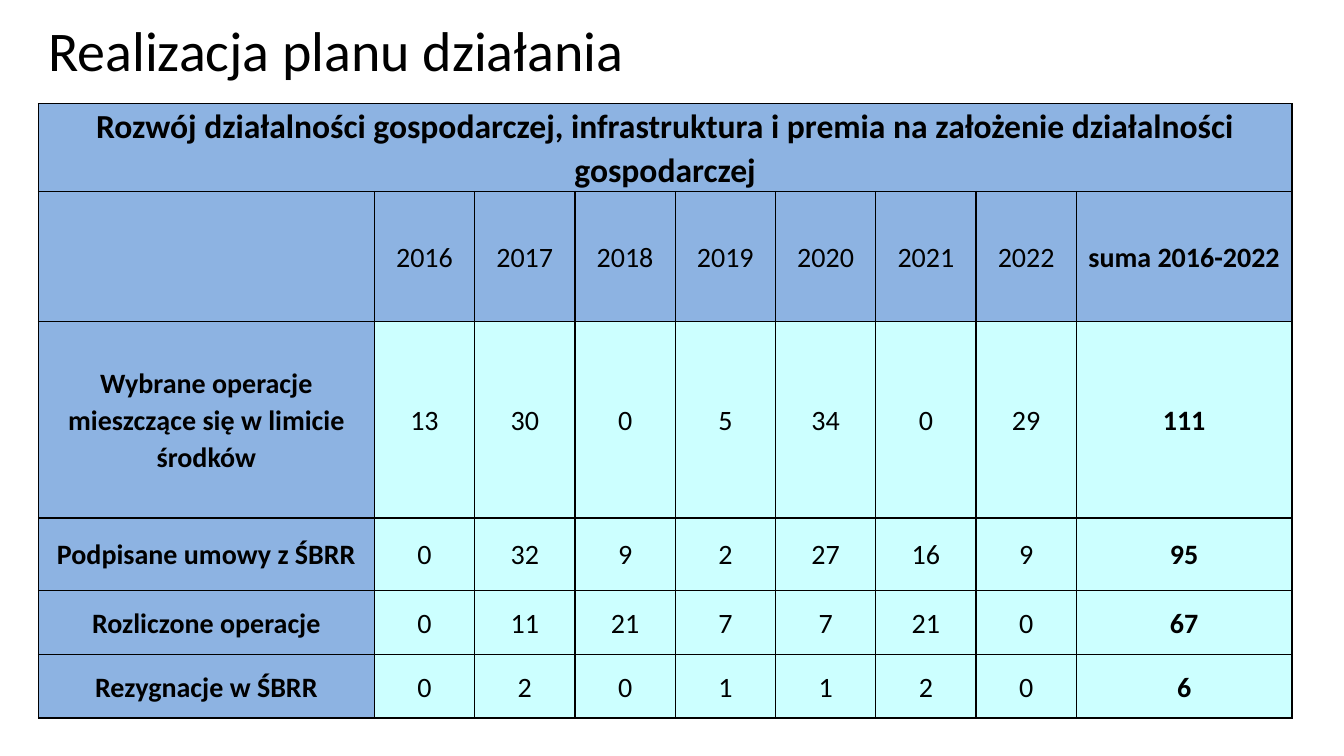
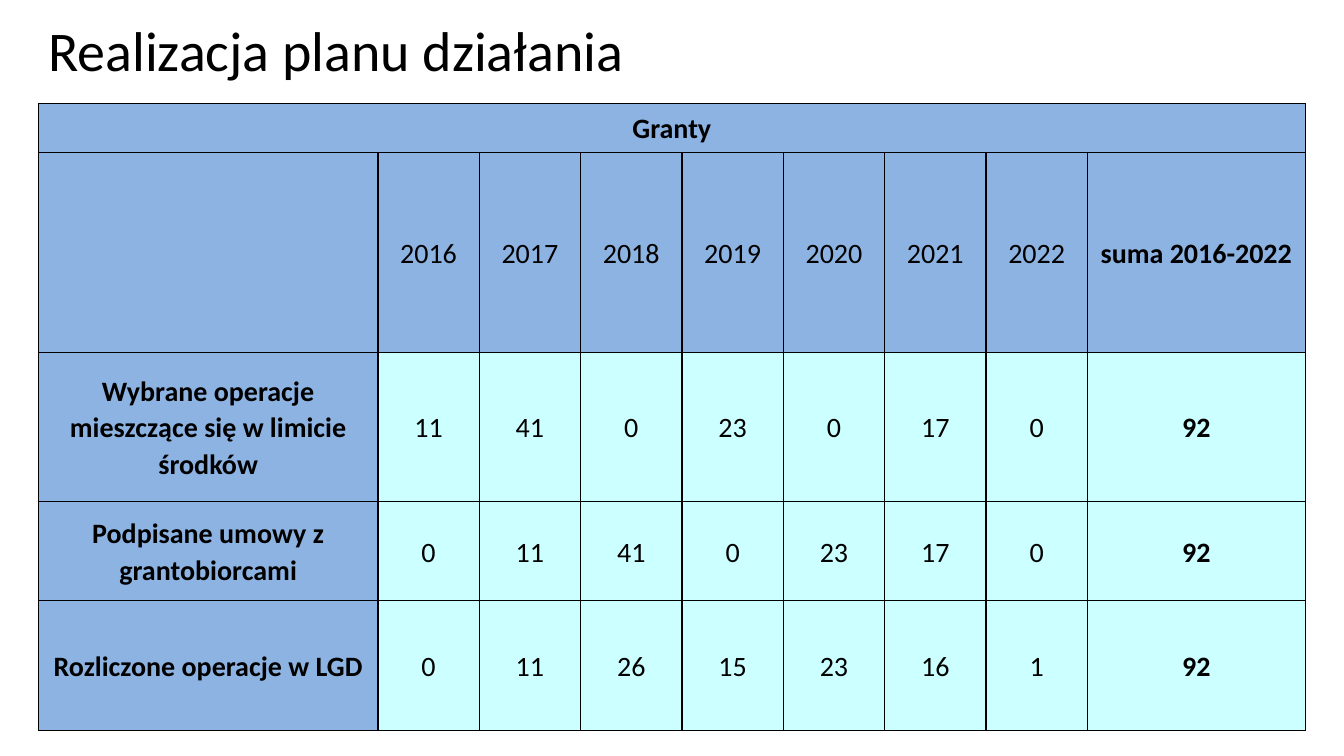
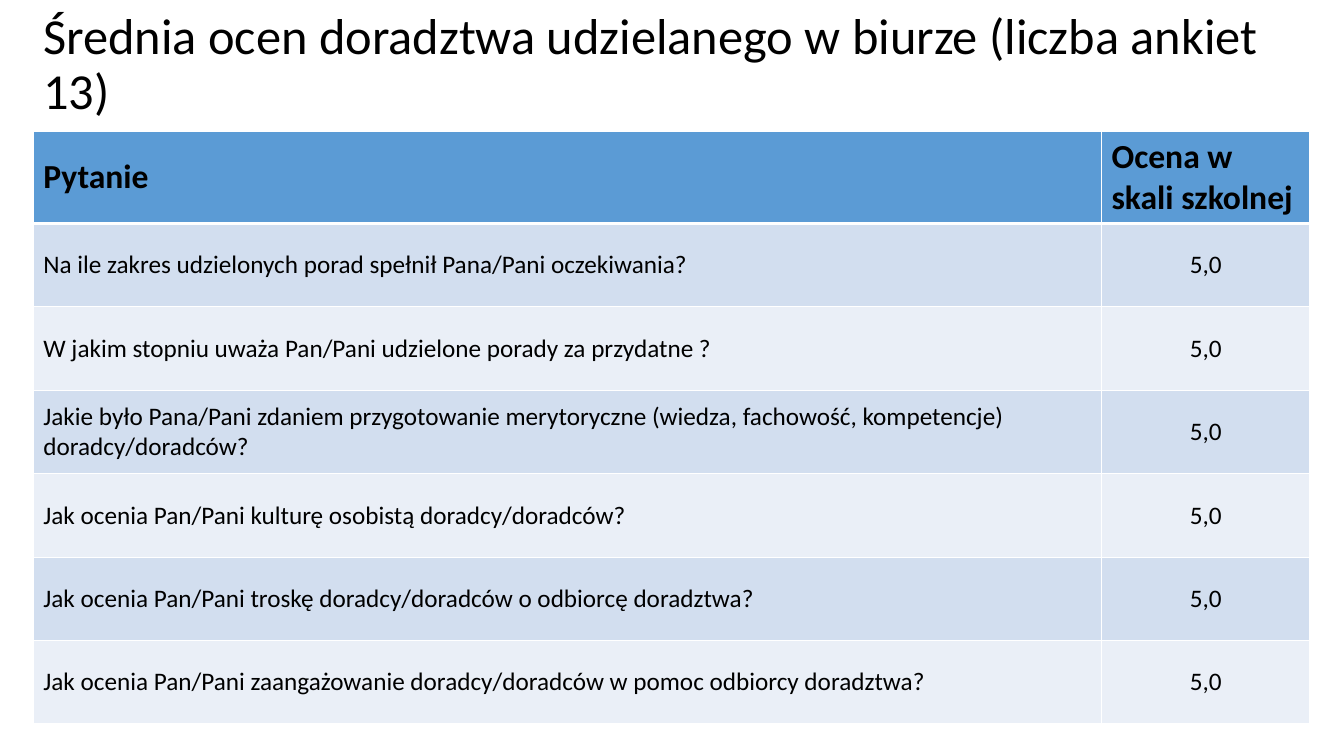
from lxml import etree
from pptx import Presentation
from pptx.dml.color import RGBColor
from pptx.enum.text import MSO_ANCHOR, PP_ALIGN
from pptx.oxml.ns import qn
from pptx.util import Pt

MIDDLE, LEFT, CENTER = MSO_ANCHOR.MIDDLE, PP_ALIGN.LEFT, PP_ALIGN.CENTER
BLACK = RGBColor(0x00, 0x00, 0x00)
WHITE = RGBColor(0xFF, 0xFF, 0xFF)
HEADING_BLUE = RGBColor(0x8D, 0xB3, 0xE2)
VALUE_CYAN = RGBColor(0xCC, 0xFF, 0xFF)
SURVEY_BLUE = RGBColor(0x5B, 0x9B, 0xD5)
BANDS = [RGBColor(0xD2, 0xDE, 0xEF), RGBColor(0xEA, 0xEF, 0xF7)]
FONT = "Calibri"

# Content
PLAN_TITLE = "Realizacja planu działania"
YEARS = list(range(2016, 2023))
SELECTED = "Wybrane operacje mieszczące się w limicie środków"
PLANS = [
    {
        "heading": "Rozwój działalności gospodarczej, infrastruktura i premia "
                   "na założenie działalności gospodarczej",
        "heading_size": 24,
        "width": 895.6,
        "heights": [62.6, 93, 140.2, 51.8, 46, 45.2],
        "rows": [
            (SELECTED, [13, 30, 0, 5, 34, 0, 29]),
            ("Podpisane umowy z ŚBRR", [0, 32, 9, 2, 27, 16, 9]),
            ("Rozliczone operacje", [0, 11, 21, 7, 7, 21, 0]),
            ("Rezygnacje w ŚBRR", [0, 2, 0, 1, 1, 2, 0]),
        ],
    },
    {
        "heading": "Granty",
        "heading_size": 20,
        "width": 905,
        "heights": [34.5, 143, 106.8, 70.6, 93],
        "rows": [
            (SELECTED, [11, 41, 0, 23, 0, 17, 0]),
            ("Podpisane umowy z grantobiorcami", [0, 11, 41, 0, 23, 17, 0]),
            ("Rozliczone operacje w LGD", [0, 11, 26, 15, 23, 16, 1]),
        ],
    },
]
SURVEY_TITLE = "Średnia ocen doradztwa udzielanego w biurze (liczba ankiet 13)"
SURVEY_HEADER = ["Pytanie", "Ocena w skali szkolnej"]
GRADE = "5,0"
QUESTIONS = [
    "Na ile zakres udzielonych porad spełnił Pana/Pani oczekiwania?",
    "W jakim stopniu uważa Pan/Pani udzielone porady za przydatne ?",
    "Jakie było Pana/Pani zdaniem przygotowanie merytoryczne "
    "(wiedza, fachowość, kompetencje) doradcy/doradców?",
    "Jak ocenia Pan/Pani kulturę osobistą doradcy/doradców?",
    "Jak ocenia Pan/Pani troskę doradcy/doradców o odbiorcę doradztwa?",
    "Jak ocenia Pan/Pani zaangażowanie doradcy/doradców w pomoc odbiorcy doradztwa?",
]

# Shared formats
PLAN_LEFT, PLAN_TOP = 27.4, 74.2
SURVEY_LEFT, SURVEY_TOP = 23.8, 93.6
LABEL_SHARE, YEAR_SHARE, TOTAL_SHARE = 0.268, 0.08, 0.172
PLAN_PARA = {"alignment": CENTER, "line_spacing": 1.07, "space_after": Pt(8)}
PLAN_CELL = {"margin_left": Pt(1.5), "margin_right": Pt(1.5),
             "margin_top": 0, "margin_bottom": 0}


def set_all(target, values):
    for name, value in values.items():
        setattr(target, name, value)


def write(frame, text, size, bold, para_format):
    para = frame.paragraphs[0]
    set_all(para, para_format)
    span = para.add_run()
    span.text = text
    set_all(span.font, {"name": FONT, "size": Pt(size), "bold": bold})
    span.font.color.rgb = BLACK


def add_page(deck, title, size, left, top, width, height):
    page = deck.slides.add_slide(deck.slide_layouts[6])
    box = page.shapes.add_textbox(Pt(left), Pt(top), Pt(width), Pt(height))
    set_all(box.text_frame, {"word_wrap": True, "vertical_anchor": MIDDLE})
    write(box.text_frame, title, size, False, {"line_spacing": 0.9})
    return page


def add_grid(page, left, top, widths, heights):
    frame = page.shapes.add_table(len(heights), len(widths), Pt(left), Pt(top),
                                  Pt(sum(widths)), Pt(sum(heights)))
    table = frame.table
    set_all(table, {"first_row": False, "horz_banding": False})
    for column, width in zip(table.columns, widths):
        column.width = Pt(width)
    for row, height in zip(table.rows, heights):
        row.height = Pt(height)
    return table


def style_cell(cell, fill, line, top=1, bottom=1):
    # Border elements come before the fill in the cell properties
    properties = cell._tc.get_or_add_tcPr()
    for side, weight in (("L", 1), ("R", 1), ("T", top), ("B", bottom)):
        border = etree.SubElement(properties, qn("a:ln" + side), w=str(Pt(weight)))
        solid = etree.SubElement(border, qn("a:solidFill"))
        etree.SubElement(solid, qn("a:srgbClr"), val=str(line))
    cell.fill.solid()
    cell.fill.fore_color.rgb = fill
    cell.vertical_anchor = MIDDLE


def add_plan(deck, plan):
    page = add_page(deck, PLAN_TITLE, 40, PLAN_LEFT, 2.2, 828, 72)
    shares = [LABEL_SHARE] + [YEAR_SHARE] * len(YEARS) + [TOTAL_SHARE]
    widths = [round(plan["width"] * share, 2) for share in shares]
    table = add_grid(page, PLAN_LEFT, PLAN_TOP, widths, plan["heights"])
    last = len(widths) - 1
    rows = [[plan["heading"]] + [""] * last, ["", *YEARS, "suma 2016-2022"]]
    rows += [[label, *values, sum(values)] for label, values in plan["rows"]]
    for r, row in enumerate(rows):
        for c, value in enumerate(row):
            cell = table.cell(r, c)
            style_cell(cell, HEADING_BLUE if r < 2 or c == 0 else VALUE_CYAN, BLACK)
            set_all(cell, PLAN_CELL)
            if value != "":
                size = plan["heading_size"] if r == 0 else 20
                write(cell.text_frame, str(value), size, c in (0, last), PLAN_PARA)
    table.cell(0, 0).merge(table.cell(0, last))


def add_survey(deck):
    page = add_page(deck, SURVEY_TITLE, 36, SURVEY_LEFT, 0, 936, 93.6)
    heights = [66] + [59.6] * len(QUESTIONS)
    table = add_grid(page, SURVEY_LEFT, SURVEY_TOP, [763, 149], heights)
    rows = [SURVEY_HEADER] + [[question, GRADE] for question in QUESTIONS]
    for r, row in enumerate(rows):
        header = r == 0
        fill = SURVEY_BLUE if header else BANDS[(r - 1) % 2]
        for c, text in enumerate(row):
            cell = table.cell(r, c)
            style_cell(cell, fill, WHITE, top=3 if r == 1 else 1,
                       bottom=3 if header else 1)
            alignment = CENTER if c == 1 and not header else LEFT
            write(cell.text_frame, text, 24 if header else 18, header,
                  {"alignment": alignment})


def main():
    deck = Presentation()
    set_all(deck, {"slide_width": Pt(960), "slide_height": Pt(540)})
    for plan in PLANS:
        add_plan(deck, plan)
    add_survey(deck)
    deck.save("out.pptx")


if __name__ == "__main__":
    main()
